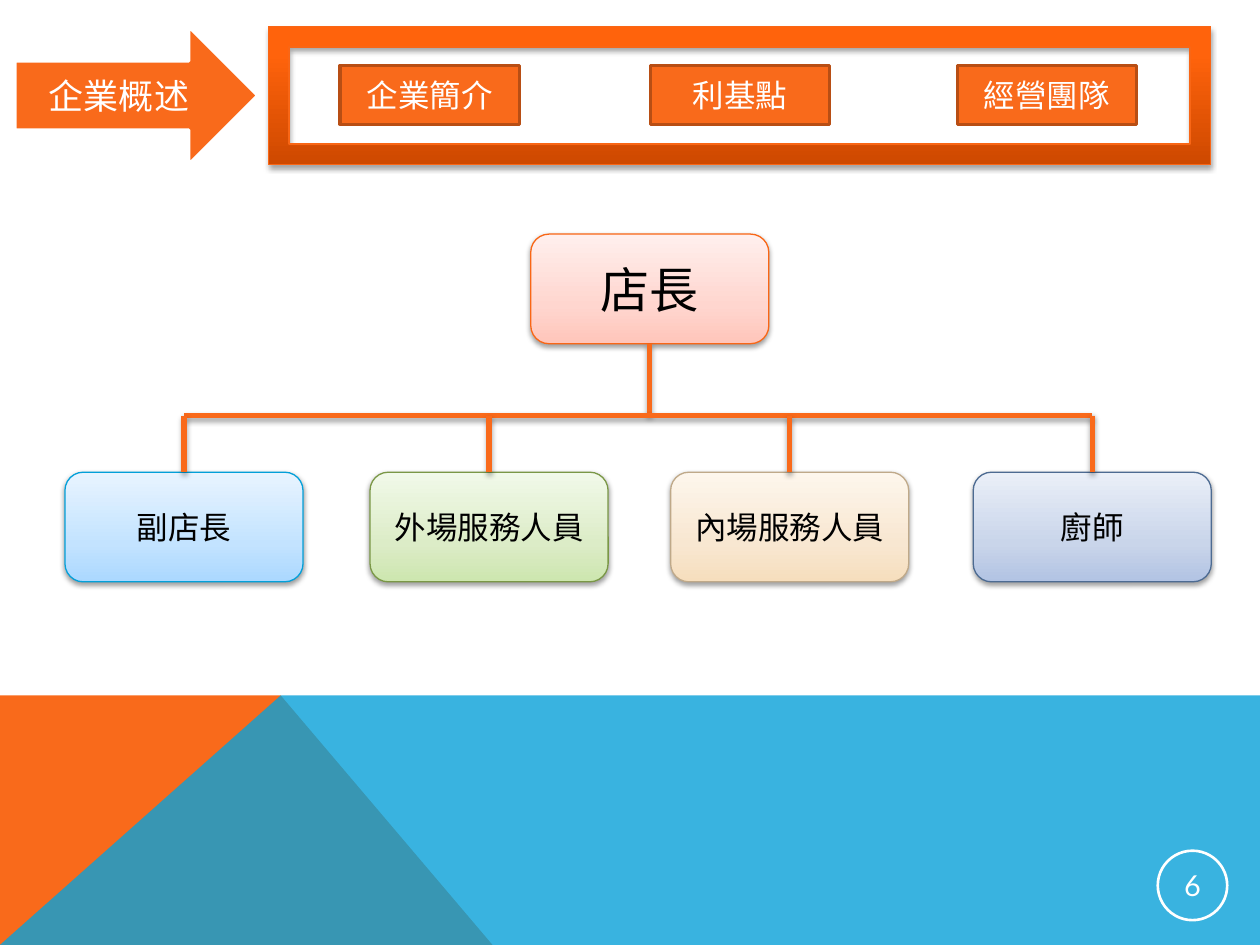
"""Build the company overview slide with its store organisation chart."""
from lxml import etree
from pptx import Presentation
from pptx.dml.color import RGBColor
from pptx.enum import shapes, text
from pptx.oxml import ns
from pptx.util import Cm, Pt

COLORS = {
    "orange": "F96A1B", "rust": "B84E14", "ember": "F96615", "sky": "08A1D9",
    "white": "FFFFFF", "black": "000000",
}
FRAME_STOPS = [(0, "CE4900"), (80, "FF630C"), (100, "FF640E")]
MANAGER_STOPS = [(0, "FFC5BA"), (35, "FFD6CF"), (100, "FFEFED")]
STAFF = [
    ("副店長", 3.71, "03A0D9", [(0, "ABD8FF"), (35, "C3E3FF"), (100, "E8F4FF")]),
    ("外場服務人員", 9.86, "7A9746", [(0, "CDE6AF"), (35, "DCECC7"), (100, "F1F9E9")]),
    ("內場服務人員", 15.92, "BFA989", [(0, "F6DEBD"), (35, "F8E7D1"), (100, "FDF6EC")]),
    ("廚師", 22.02, "4D6B92", [(0, "B2C3E3"), (35, "C9D5EA"), (100, "EAEFF8")]),
]
TABS = [("企業簡介", 6.86), ("利基點", 13.11), ("經營團隊", 19.3)]
CJK_FONT = "Noto Sans CJK JP"
CARD_WIDTH, CARD_HEIGHT = 4.8, 2.21
MANAGER_CENTER, MANAGER_TOP = 13.1, 4.72
STAFF_TOP, BUS_TOP = 9.52, 8.38


def add_color(parent, color, alpha=100):
    """Append a colour element with an opacity in percent."""
    node = etree.SubElement(parent, ns.qn("a:srgbClr"), val=color)
    if alpha < 100:
        etree.SubElement(node, ns.qn("a:alpha"), val=str(alpha * 1000))


def add_shadow(properties, alpha, distance):
    """Give shape properties a soft shadow that falls straight down."""
    effects = properties.find(ns.qn("a:effectLst"))
    if effects is None:
        effects = etree.SubElement(properties, ns.qn("a:effectLst"))
    shadow = etree.SubElement(
        effects, ns.qn("a:outerShdw"), blurRad=str(Pt(3.1)),
        dist=str(Pt(distance)), dir="5400000", rotWithShape="0")
    add_color(shadow, COLORS["black"], alpha)


def paint(shape, fill=None, line=None, width=0.75):
    """Set a solid, graded or empty fill and an outline."""
    shape.shadow.inherit = False
    if isinstance(fill, list):
        shape.fill.gradient()
        shape.fill.gradient_angle = 90
        stops = shape._element.spPr.find(ns.qn("a:gradFill")).find(ns.qn("a:gsLst"))
        for old_stop in list(stops):
            stops.remove(old_stop)
        for position, color in fill:
            add_color(etree.SubElement(stops, ns.qn("a:gs"), pos=str(position * 1000)), color)
    elif fill:
        shape.fill.solid()
        shape.fill.fore_color.rgb = RGBColor.from_string(fill)
    else:
        shape.fill.background()
    if line:
        shape.line.color.rgb = RGBColor.from_string(line)
        shape.line.width = Pt(width)
    else:
        shape.line.fill.background()


def write(shape, label, size, color, font="Lato"):
    """Write one centred label into a shape."""
    shape.text_frame.vertical_anchor = text.MSO_ANCHOR.MIDDLE
    paragraph = shape.text_frame.paragraphs[0]
    paragraph.alignment = text.PP_ALIGN.CENTER
    run = paragraph.add_run()
    run.text = label
    for name, value in {"size": Pt(size), "name": font}.items():
        setattr(run.font, name, value)
    run.font.color.rgb = RGBColor.from_string(color)
    etree.SubElement(run._r.rPr, ns.qn("a:ea"), typeface=CJK_FONT)


def add_block(slide, preset, box, **look):
    """Add a painted preset shape at a box given in centimetres."""
    block = slide.shapes.add_shape(preset, *map(Cm, box))
    paint(block, **look)
    return block


def add_card(slide, label, center, top, line, stops, size=18, font="Lato"):
    """Add a rounded card for one position in the store."""
    card = add_block(
        slide, shapes.MSO_SHAPE.ROUNDED_RECTANGLE,
        (center - CARD_WIDTH / 2, top, CARD_WIDTH, CARD_HEIGHT), fill=stops, line=line)
    add_shadow(card._element.spPr, 38, 1.6)
    write(card, label, size, COLORS["black"], font)


def add_branch(slide, *ends):
    """Add a straight line of the organisation chart."""
    branch = slide.shapes.add_connector(shapes.MSO_CONNECTOR.STRAIGHT, *map(Cm, ends))
    branch.line.color.rgb = RGBColor.from_string(COLORS["orange"])
    branch.line.width = Pt(3)
    add_shadow(branch._element.spPr, 35, 1.8)


def add_panel(slide, points, color, alpha=100):
    """Add a closed outline of the footer."""
    start, *rest = [(Cm(x), Cm(y)) for x, y in points]
    builder = slide.shapes.build_freeform(*start)
    builder.add_line_segments(rest, close=True)
    panel = builder.convert_to_shape()
    paint(panel, fill=color)
    if alpha < 100:
        node = panel._element.spPr.find(ns.qn("a:solidFill"))[0]
        etree.SubElement(node, ns.qn("a:alpha"), val=str(alpha * 1000))


def add_footer(slide):
    """Add the coloured footer and the page number."""
    add_panel(slide, [(0, 19.05), (0, 14.02), (5.66, 14.02), (9.93, 19.05)], COLORS["orange"])
    add_panel(slide, [(0, 19.05), (5.66, 14.02), (25.4, 14.02), (25.4, 19.05)], COLORS["sky"], 80)
    badge = add_block(slide, shapes.MSO_SHAPE.OVAL, (23.34, 17.15, 1.4, 1.4),
                      line=COLORS["white"], width=1.5)
    for side in ("left", "top", "right", "bottom"):
        setattr(badge.text_frame, f"margin_{side}", Cm(0.03))
    write(badge, "6", 16.5, COLORS["white"])


def add_header(slide):
    """Add the section arrow and the framed tabs."""
    arrow = add_block(slide, shapes.MSO_SHAPE.RIGHT_ARROW, (0.3, 0.53, 4.9, 2.79),
                      fill=COLORS["orange"], line=COLORS["white"], width=2)
    write(arrow, "企業概述", 20, COLORS["white"], CJK_FONT)
    frame = add_block(slide, shapes.MSO_SHAPE.FRAME, (5.41, 0.53, 19, 2.79),
                      fill=FRAME_STOPS, line=COLORS["ember"])
    frame.adjustments[0] = 0.15
    add_shadow(frame._element.spPr, 35, 1.8)
    for label, left in TABS:
        tab = add_block(slide, shapes.MSO_SHAPE.RECTANGLE, (left, 1.32, 3.61, 1.19),
                        fill=COLORS["orange"], line=COLORS["rust"], width=2)
        write(tab, label, 18, COLORS["white"])


def add_organisation(slide):
    """Add the manager, the staff and the lines between them."""
    add_card(slide, "店長", MANAGER_CENTER, MANAGER_TOP, COLORS["ember"],
             MANAGER_STOPS, 28, CJK_FONT)
    for label, center, line, stops in STAFF:
        add_card(slide, label, center, STAFF_TOP, line, stops)
    add_branch(slide, MANAGER_CENTER, MANAGER_TOP + CARD_HEIGHT, MANAGER_CENTER, BUS_TOP)
    centers = [center for _, center, _, _ in STAFF]
    add_branch(slide, centers[0], BUS_TOP, centers[-1], BUS_TOP)
    for center in centers:
        add_branch(slide, center, BUS_TOP, center, STAFF_TOP)


def main():
    """Build and save the slide."""
    deck = Presentation()
    deck.slide_width, deck.slide_height = Cm(25.4), Cm(19.05)
    slide = deck.slides.add_slide(deck.slide_layouts[6])
    add_footer(slide)
    add_header(slide)
    add_organisation(slide)
    deck.save("out.pptx")


if __name__ == "__main__":
    main()
